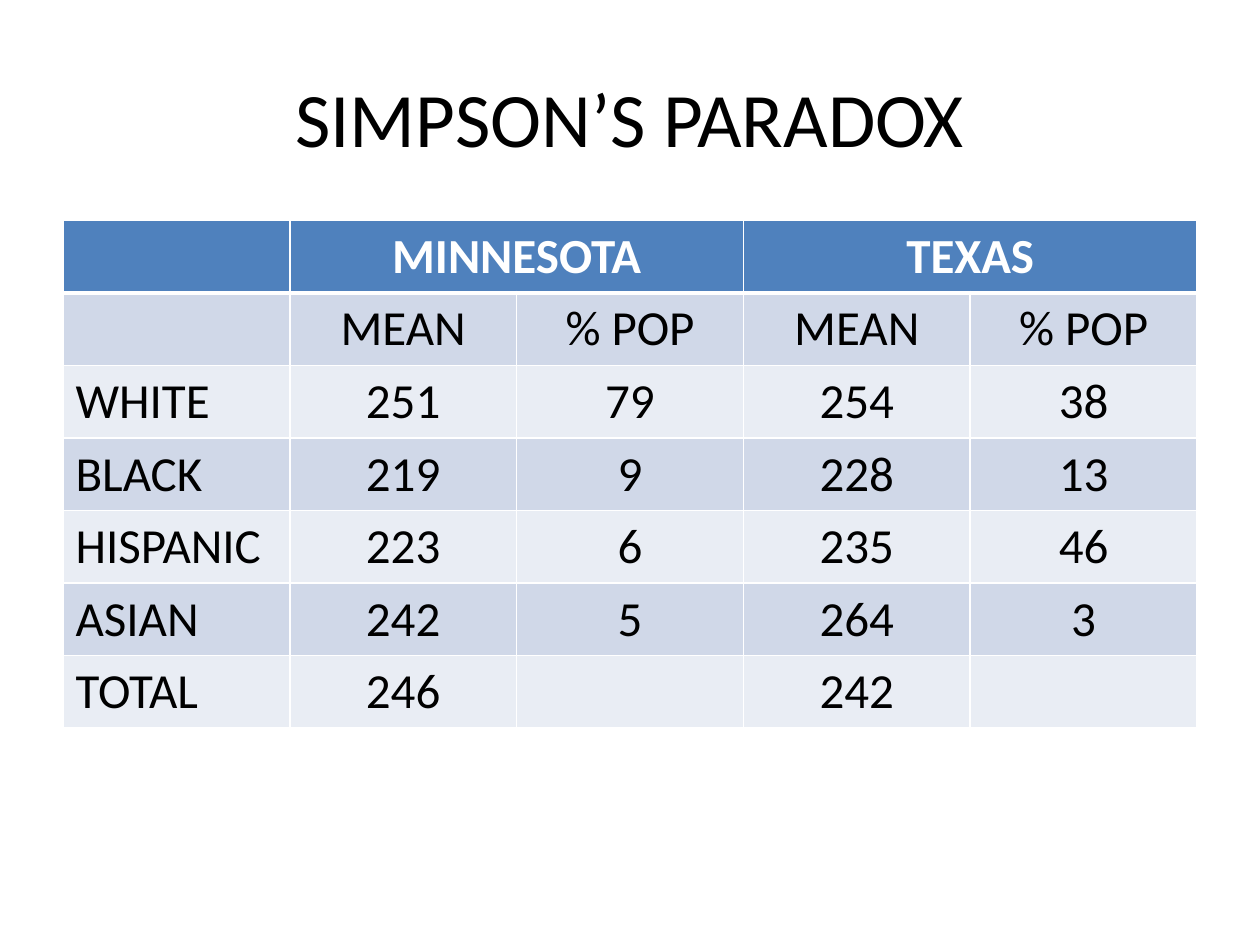
from dataclasses import dataclass

from lxml import etree
from pptx import Presentation
from pptx import util as u
from pptx.dml.color import RGBColor
from pptx.enum import text
from pptx.oxml.ns import qn


@dataclass(frozen=True)
class Theme:
    font: str = "Calibri"
    title_size: int = 44
    cell_size: int = 28
    ink: str = "000000"
    paper: str = "FFFFFF"
    header: str = "4F81BD"
    bands: tuple = ("E9EDF4", "D0D8E8")
    thin: int = 1
    thick: int = 3


THEME = Theme()
WIDTH, HEIGHT = u.Inches(10), u.Inches(7.5)
MARGIN = 0.05  # share of the slide width
ROW_HEIGHT = u.Inches(0.57)

HEADINGS = ["", "MINNESOTA", "", "TEXAS", ""]
ROWS = [
    ["", "MEAN", "% POP", "MEAN", "% POP"],
    ["WHITE", "251", "79", "254", "38"],
    ["BLACK", "219", "9", "228", "13"],
    ["HISPANIC", "223", "6", "235", "46"],
    ["ASIAN", "242", "5", "264", "3"],
    ["TOTAL", "246", "", "242", ""],
]


def format_text(para, size, color, align, bold=False):
    para.alignment = align
    for target in [para, *para.runs]:
        font = target.font
        font.name, font.size, font.bold = THEME.font, u.Pt(size), bold
        font.color.rgb = RGBColor.from_string(color)


def add_title(page, words):
    title = page.shapes.title
    title.left, title.top = int(WIDTH * MARGIN), int(HEIGHT * 0.04)
    title.width, title.height = int(WIDTH * (1 - 2 * MARGIN)), u.Inches(1.25)
    title.text_frame.text = words
    title.text_frame.vertical_anchor = text.MSO_ANCHOR.MIDDLE
    format_text(title.text_frame.paragraphs[0], THEME.title_size, THEME.ink,
                text.PP_ALIGN.CENTER)


def set_borders(cell, top, bottom):
    """Draw the four sides; border elements must come before the fill."""
    properties = cell._tc.get_or_add_tcPr()
    widths = {"a:lnL": THEME.thin, "a:lnR": THEME.thin,
              "a:lnT": top, "a:lnB": bottom}
    for index, (side, width) in enumerate(widths.items()):
        line = etree.Element(qn(side), w=str(u.Pt(width)))
        fill = etree.SubElement(line, qn("a:solidFill"))
        etree.SubElement(fill, qn("a:srgbClr"), val=THEME.paper)
        properties.insert(index, line)


def style_cell(cell, words, row, column):
    is_header = row == 0
    cell.text_frame.text = words
    format_text(cell.text_frame.paragraphs[0], THEME.cell_size,
                THEME.paper if is_header else THEME.ink,
                text.PP_ALIGN.CENTER if column else text.PP_ALIGN.LEFT,
                is_header)
    cell.fill.solid()
    color = THEME.header if is_header else THEME.bands[row % 2]
    cell.fill.fore_color.rgb = RGBColor.from_string(color)
    set_borders(cell, top=THEME.thick if row == 1 else THEME.thin,
                bottom=THEME.thick if is_header else THEME.thin)


def add_scores(page):
    content = [HEADINGS, *ROWS]
    frame = page.shapes.add_table(
        len(content), len(HEADINGS), int(WIDTH * MARGIN), u.Inches(1.75),
        int(WIDTH * (1 - 2 * MARGIN)), ROW_HEIGHT * len(content))
    table = frame.table
    for row, values in enumerate(content):
        for column, words in enumerate(values):
            style_cell(table.cell(row, column), words, row, column)
    # Each state heading spans its two columns
    for column in (1, 3):
        table.cell(0, column).merge(table.cell(0, column + 1))


def main():
    deck = Presentation()
    deck.slide_width, deck.slide_height = WIDTH, HEIGHT
    page = deck.slides.add_slide(deck.slide_layouts.get_by_name("Title Only"))
    add_title(page, "SIMPSON’S PARADOX")
    add_scores(page)
    deck.save("out.pptx")


if __name__ == "__main__":
    main()
